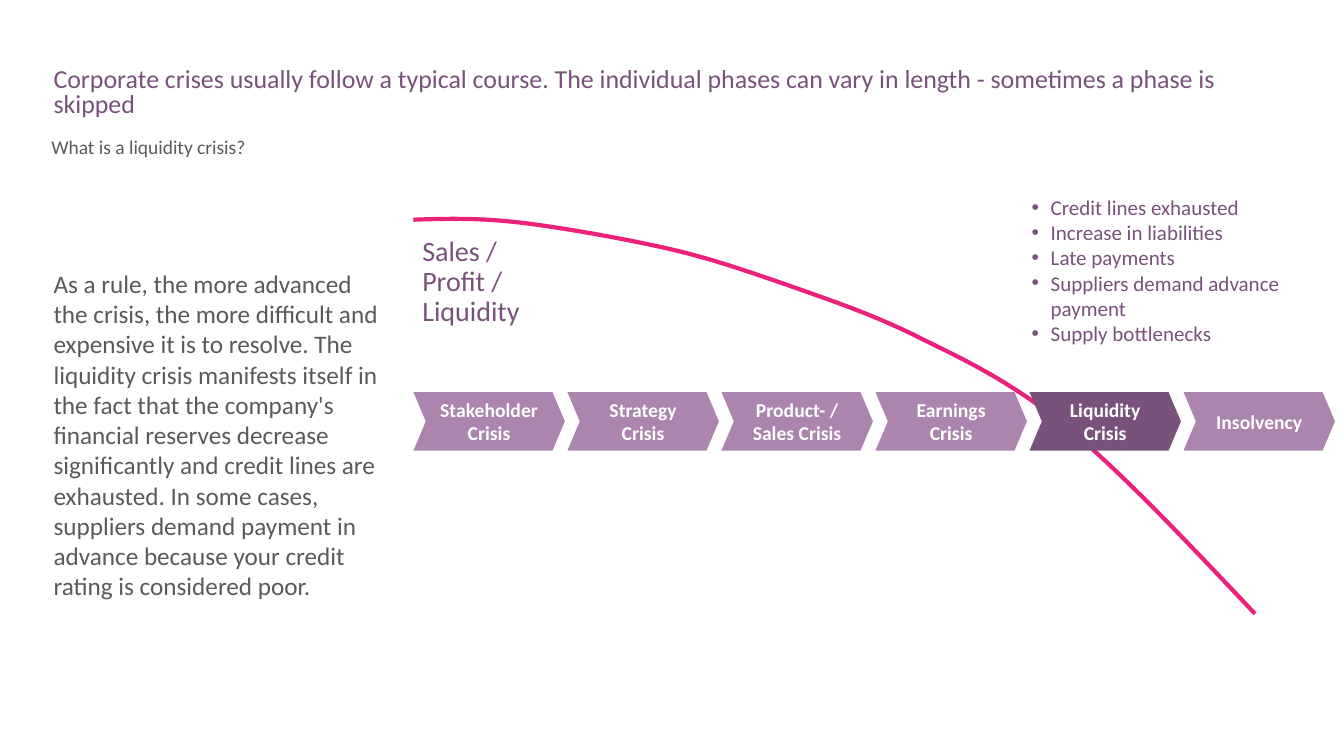
from lxml.etree import SubElement
from pptx import Presentation
from pptx.dml.color import RGBColor
from pptx.enum.shapes import MSO_SHAPE
from pptx.enum.text import MSO_ANCHOR, MSO_AUTO_SIZE, PP_ALIGN
from pptx.oxml.ns import qn
from pptx.util import Inches, Pt

PLUM, MAUVE, PINK, GREY, WHITE = "79527B", "AB85AD", "EC2179", "595A59", "FFFFFF"
FONT = "Calibri"

TITLE = ("Corporate crises usually follow a typical course. The individual phases "
         "can vary in length - sometimes a phase is skipped")
EXPLANATION = ("As a rule, the more advanced the crisis, the more difficult and expensive "
               "it is to resolve. The liquidity crisis manifests itself in the fact that the "
               "company's financial reserves decrease significantly and credit lines are "
               "exhausted. In some cases, suppliers demand payment in advance because your "
               "credit rating is considered poor.")
SYMPTOMS = ["Credit lines exhausted", "Increase in liabilities", "Late payments",
            "Suppliers demand advance payment", "Supply bottlenecks"]
PHASES = ["Stakeholder\vCrisis", "Strategy\vCrisis", "Product- / Sales Crisis",
          "Earnings\vCrisis", "Liquidity\vCrisis", "Insolvency"]
CURRENT_PHASE = 4

# Start point, then two control points and an end point for each segment
DECLINE = [(30.75, 29.07),
           (33.22, 28.93), (35.62, 28.8), (38.78, 29.47),
           (41.92, 30.13), (46.5, 31.6), (49.8, 32.93),
           (53.02, 34.27), (55.35, 35.73), (58.42, 37.6),
           (61.58, 39.6), (65.02, 41.6), (68.55, 44.8),
           (72.08, 47.87), (75.38, 50.67), (79.5, 56.67),
           (83.62, 62.8), (88.5, 72), (93.38, 81.2)]


def color(value):
    return RGBColor.from_string(value)


class SlideBuilder:
    """Places elements on a grid of 100 columns and 100 rows."""

    def __init__(self, presentation, layout_index):
        layout = presentation.slide_layouts[layout_index]
        self.slide = presentation.slides.add_slide(layout)
        self.column = presentation.slide_width / 100
        self.row = presentation.slide_height / 100

    def point(self, x, y):
        return round(x * self.column), round(y * self.row)

    def fill_text(self, shape, texts, size, text_color, bold=False, spacing=1.0,
                  align=PP_ALIGN.LEFT, anchor=MSO_ANCHOR.TOP, bullet=False):
        frame = shape.text_frame
        frame.word_wrap = True
        frame.auto_size = MSO_AUTO_SIZE.NONE
        frame.vertical_anchor = anchor
        for index, text in enumerate(texts):
            paragraph = frame.paragraphs[0] if index == 0 else frame.add_paragraph()
            paragraph.text = text
            paragraph.alignment = align
            paragraph.line_spacing = spacing
            paragraph.space_before = Pt(0)
            self.set_bullet(paragraph, bullet, text_color)
            font = paragraph.font
            font.name, font.size, font.bold = FONT, Pt(size), bold
            font.color.rgb = color(text_color)

    def set_bullet(self, paragraph, bullet, bullet_color):
        properties = paragraph._p.get_or_add_pPr()
        indent = Inches(0.19) if bullet else 0
        properties.set("marL", str(indent))
        properties.set("indent", str(-indent))
        if bullet:
            tint = SubElement(properties, qn("a:buClr"))
            SubElement(tint, qn("a:srgbClr"), val=bullet_color)
            SubElement(properties, qn("a:buChar"), char="•")
        else:
            SubElement(properties, qn("a:buNone"))

    def placeholder(self, index, x, y, width, height, texts, *style, **options):
        shape = self.slide.placeholders[index]
        shape.left, shape.top = self.point(x, y)
        shape.width, shape.height = self.point(width, height)
        self.fill_text(shape, texts, *style, **options)

    def text(self, x, y, width, height, texts, *style, **options):
        shape = self.slide.shapes.add_textbox(*self.point(x, y), *self.point(width, height))
        self.fill_text(shape, texts, *style, **options)

    def chevron(self, x, y, width, height, label, fill):
        shape = self.slide.shapes.add_shape(
            MSO_SHAPE.CHEVRON, *self.point(x, y), *self.point(width, height))
        shape.adjustments[0] = 0.212
        shape.shadow.inherit = False
        shape.fill.solid()
        shape.fill.fore_color.rgb = color(fill)
        shape.line.fill.background()
        self.fill_text(shape, [label], 14, WHITE, bold=True,
                       align=PP_ALIGN.CENTER, anchor=MSO_ANCHOR.MIDDLE)

    def curve(self, points, line_color, width):
        start, *others = [self.point(*point) for point in points]
        builder = self.slide.shapes.build_freeform(*start)
        builder.add_line_segments(others, close=False)
        shape = builder.convert_to_shape()
        shape.shadow.inherit = False
        shape.fill.background()
        shape.line.color.rgb = color(line_color)
        shape.line.width = Pt(width)
        # Join every three straight steps into one cubic segment
        outline = next(shape._element.iter(qn("a:path")))
        steps = outline.findall(qn("a:lnTo"))
        for first in range(0, len(steps), 3):
            segment = SubElement(outline, qn("a:cubicBezTo"))
            for step in steps[first:first + 3]:
                segment.append(step[0])
                outline.remove(step)


def main():
    presentation = Presentation()
    presentation.slide_width, presentation.slide_height = Inches(13.33), Inches(7.5)
    builder = SlideBuilder(presentation, 3)

    # Heading and explanation
    builder.placeholder(0, 3.23, 8.4, 94.07, 8.53, [TITLE], 18.5, PLUM, spacing=0.8)
    builder.text(3.08, 18, 94.22, 3.73, ["What is a liquidity crisis?"], 13.9, GREY, spacing=0.7)
    builder.placeholder(1, 3.23, 23.87, 26.18, 67.2, [EXPLANATION], 18, GREY,
                        anchor=MSO_ANCHOR.MIDDLE)

    # Declining curve, behind the phases
    builder.curve(DECLINE, PINK, 3)
    builder.text(30.68, 30.67, 12.45, 10.13, ["Sales /\vProfit / Liquidity"], 20, PLUM,
                 spacing=0.9)

    # Crisis phases
    for index, phase in enumerate(PHASES):
        fill = PLUM if index == CURRENT_PHASE else MAUVE
        builder.chevron(30.76 + index * 11.46, 51.87, 11.27, 7.75, phase, fill)

    # Symptoms of the liquidity crisis
    builder.placeholder(2, 76, 25.07, 20.48, 21.6, SYMPTOMS, 15, PLUM, bullet=True)

    presentation.save("out.pptx")


if __name__ == "__main__":
    main()
